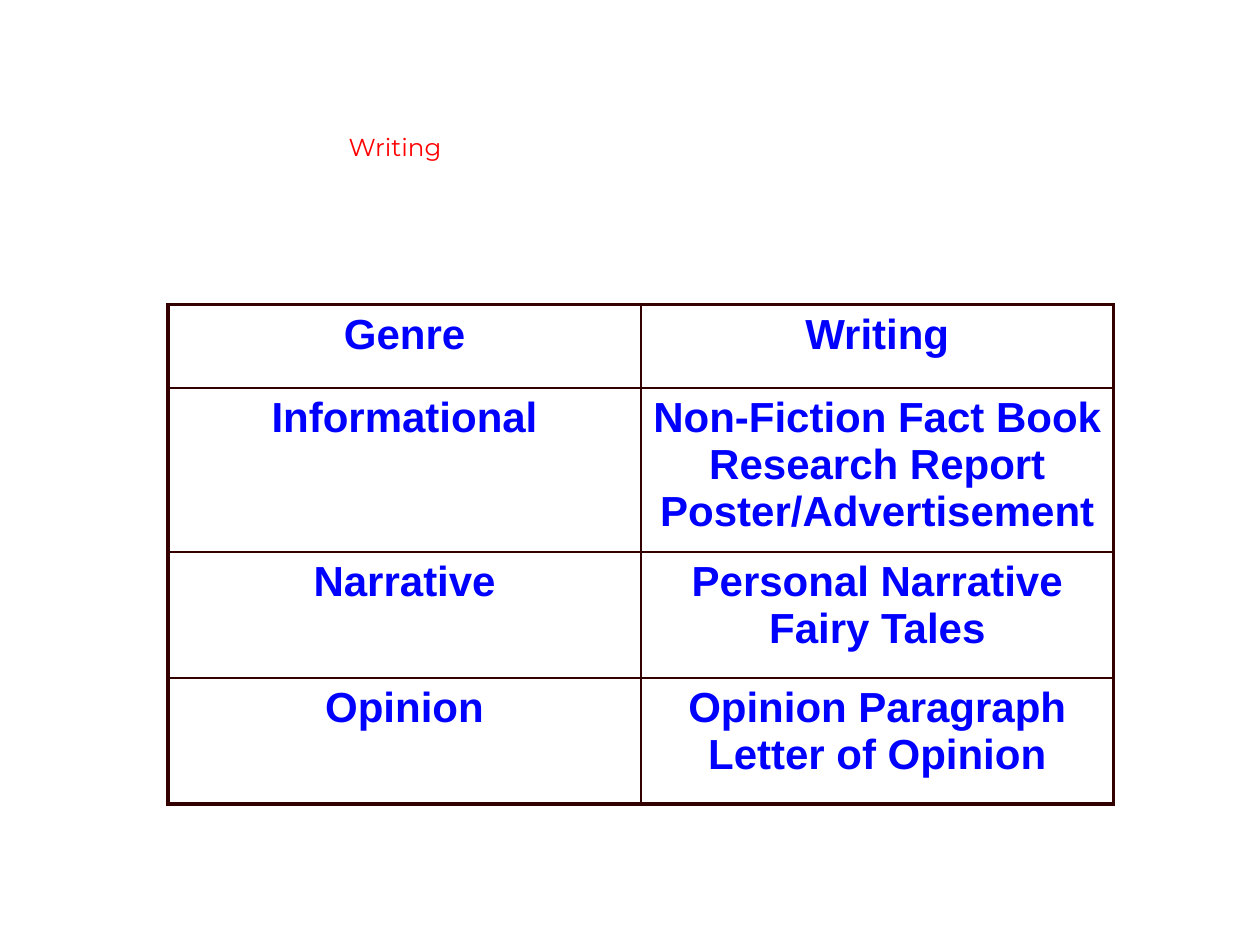
from dataclasses import dataclass
from typing import NamedTuple

from pptx import Presentation
from pptx.dml.color import RGBColor
from pptx.enum.text import PP_ALIGN
from pptx.oxml import parse_xml
from pptx.oxml.ns import nsdecls
from pptx.util import Cm, Pt


@dataclass(frozen=True)
class Theme:
    red: str = "FF0000"
    blue: str = "0000FF"
    edge: str = "330000"
    black: str = "000000"
    small: float = 14
    large: float = 24
    thin: float = 1
    thick: float = 2.25
    rim: float = 0.75


class Row(NamedTuple):
    genre: str
    works: str
    height: float


LOOK = Theme()
ROWS = [
    Row("Genre", "Writing", 1.68),
    Row("Informational",
        "Non-Fiction Fact Book\nResearch Report\nPoster/Advertisement", 2.57),
    Row("Narrative", "Personal Narrative\nFairy Tales", 2.54),
    Row("Opinion", "Opinion Paragraph\nLetter of Opinion", 2.54),
]
WIDTH = 9.53


def apply(target, values: dict) -> None:
    for name, value in values.items():
        setattr(target, name, value)


def style(para, face: str, size: float, color: str, bold: bool) -> None:
    for run in para.runs:
        apply(run.font, {"name": face, "size": Pt(size), "bold": bold})
        run.font.color.rgb = RGBColor.from_string(color)


def line(tag: str, width: float, color: str):
    return parse_xml(
        f'<a:{tag} {nsdecls("a")} w="{Pt(width)}"><a:solidFill>'
        f'<a:srgbClr val="{color}"/></a:solidFill></a:{tag}>')


def draw_title(slide) -> None:
    box = slide.shapes.add_textbox(Cm(6.78), Cm(2.54), Cm(9.96), Cm(2.11))
    box.text_frame.word_wrap = True
    para = box.text_frame.paragraphs[0]
    para.text = "Writing"
    style(para, "Montserrat", LOOK.small, LOOK.red, False)
    # Thin outline around the letters
    props = para.runs[0].font._element
    props.insert(0, line("ln", LOOK.rim, LOOK.black))


def draw_cell(cell, text: str, outer: dict[str, bool]) -> None:
    apply(cell, {"margin_left": 0, "margin_right": 0,
                 "margin_top": Cm(0.13), "margin_bottom": Cm(0.13)})
    para = cell.text_frame.paragraphs[0]
    apply(para, {"text": text, "alignment": PP_ALIGN.CENTER})
    style(para, "Arial", LOOK.large, LOOK.blue, True)
    # Thick lines on the outer edge, thin lines inside
    props = cell._tc.get_or_add_tcPr()
    for side, thick in outer.items():
        width = LOOK.thick if thick else LOOK.thin
        props.append(line(f"ln{side}", width, LOOK.edge))
    cell.fill.background()


def draw_table(slide, rows: list[Row]) -> None:
    total = sum(row.height for row in rows)
    table = slide.shapes.add_table(
        len(rows), 2, Cm(3.39), Cm(6.14), Cm(2 * WIDTH), Cm(total)).table
    apply(table, {"first_row": False, "horz_banding": False})
    for col in table.columns:
        col.width = Cm(WIDTH)
    for r, row in enumerate(rows):
        table.rows[r].height = Cm(row.height)
        for c, text in enumerate((row.genre, row.works)):
            outer = {"L": c == 0, "R": c == 1,
                     "T": r == 0, "B": r == len(rows) - 1}
            draw_cell(table.cell(r, c), text, outer)


def main() -> None:
    deck = Presentation()
    apply(deck, {"slide_width": Cm(25.4), "slide_height": Cm(19.05)})
    slide = deck.slides.add_slide(deck.slide_layouts[6])
    draw_title(slide)
    draw_table(slide, ROWS)
    deck.save("out.pptx")


if __name__ == "__main__":
    main()
